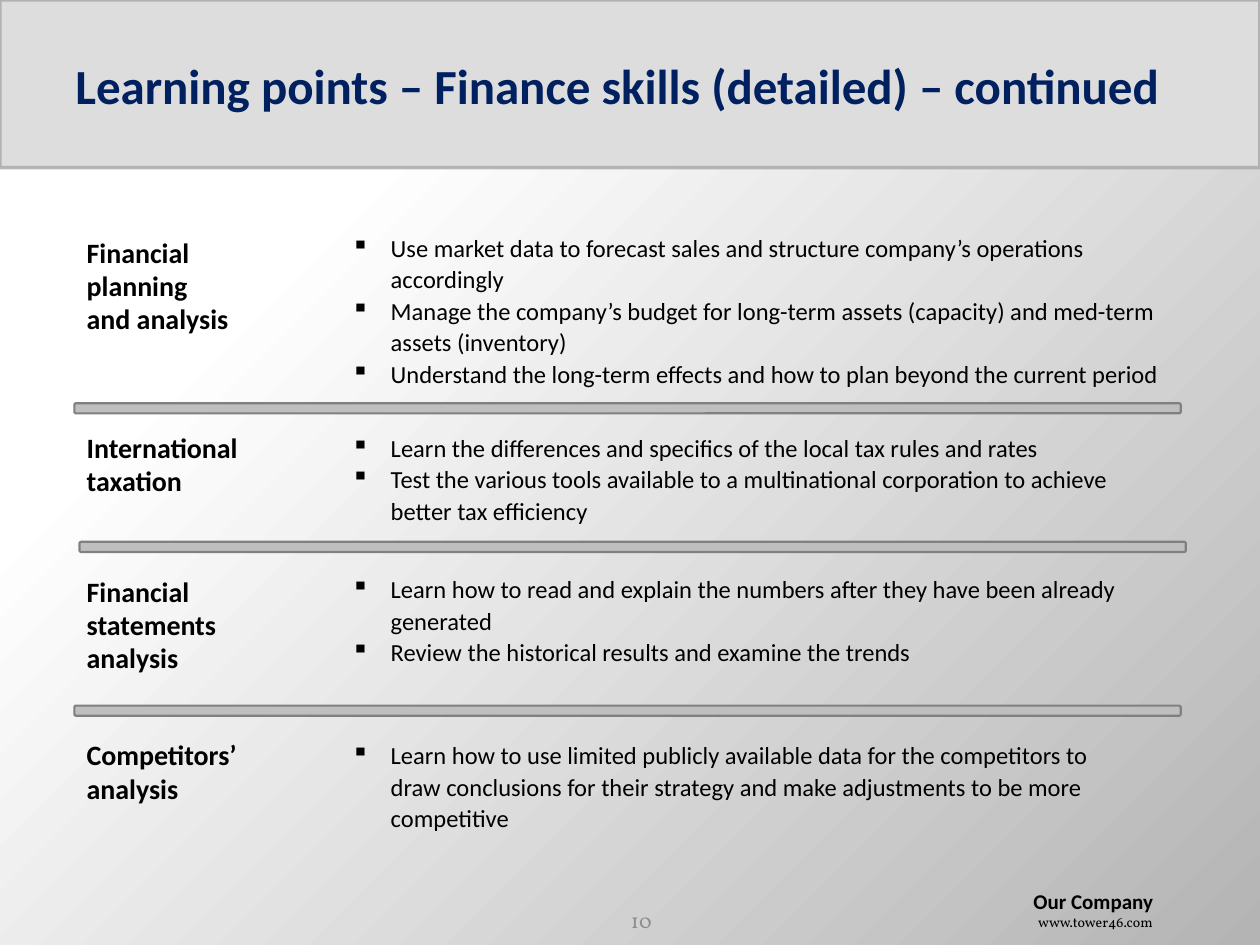
import pptx
import pptx.dml.color
import pptx.enum.shapes
import pptx.enum.text
import pptx.oxml
import pptx.oxml.ns
import pptx.util
from lxml import etree

Pt = pptx.util.Pt
SHAPE = pptx.enum.shapes.MSO_SHAPE
ALIGN = pptx.enum.text.PP_ALIGN
ANCHOR = pptx.enum.text.MSO_ANCHOR
AUTO_SIZE = pptx.enum.text.MSO_AUTO_SIZE
qn = pptx.oxml.ns.qn

LABEL_LEFT, LABEL_WIDTH = 42.5, 187.2
BULLETS_LEFT, BULLET_INDENT = 193.7, 22.5
BAR_WIDTH, BAR_HEIGHT = 632.2, 5.8

LABEL = {"size": Pt(16), "name": "Calibri", "bold": True}
BODY = {"size": Pt(14), "name": "Calibri"}

# Label top, label lines, bullets top, bullets width, bullets height, bullets
ROWS = [
    (131, ["Financial", "planning", "and analysis"], 128.2, 478, 120.2, [
        "Use market data to forecast sales and structure company’s operations accordingly",
        "Manage the company’s budget for long-term assets (capacity) and med-term assets (inventory)",
        "Understand the long-term effects and how to plan beyond the current period"]),
    (242.6, ["International", "taxation"], 242.6, 478, 83.5, [
        "Learn the differences and specifics of the local tax rules and rates",
        "Test the various tools available to a multinational corporation to achieve better tax efficiency"]),
    (324.7, ["Financial", "statements", "analysis"], 323.3, 465.8, 83.5, [
        "Learn how to read and explain the numbers after they have been already generated",
        "Review the historical results and examine the trends"]),
    (418.3, ["Competitors’", "analysis"], 418.3, 465.8, 83.5, [
        "Learn how to use limited publicly available data for the competitors to draw "
        "conclusions for their strategy and make adjustments to be more competitive"]),
]
BARS = [(42.5, 230.4), (45.4, 309.6), (42.5, 403.2)]


def color(value):
    return pptx.dml.color.RGBColor.from_string(value)


def set_background(s):
    """Radial gradient spreading from the top left corner."""
    fill = s.background.fill
    fill.gradient()
    stops = fill.gradient_stops
    for stop, (position, value) in zip(stops, [(0.24, "FFFFFF"), (1, "B4B4B4")]):
        stop.position = position
        stop.color.rgb = color(value)
    grad = s.background._cSld.find(".//" + qn("a:gradFill"))
    linear = grad.find(qn("a:lin"))
    if linear is not None:
        grad.remove(linear)
    radial = etree.SubElement(grad, qn("a:path"), {"path": "circle"})
    etree.SubElement(radial, qn("a:fillToRect"), r="100000", b="100000")


def add_box(s, kind, left, top, width, height, fill, line, line_width):
    sp = s.shapes.add_shape(kind, Pt(left), Pt(top), Pt(width), Pt(height))
    sp.shadow.inherit = False
    sp.fill.solid()
    sp.fill.fore_color.rgb = color(fill)
    sp.line.color.rgb = color(line)
    sp.line.width = Pt(line_width)
    return sp


def add_bullet(p):
    pPr = p._p.get_or_add_pPr()
    pPr.set("marL", str(Pt(BULLET_INDENT)))
    pPr.set("indent", str(-Pt(BULLET_INDENT)))
    etree.SubElement(pPr, qn("a:buChar"), char="▪")


def add_text(s, left, top, width, height, lines, font_color="000000",
             align=ALIGN.LEFT, spacing=None, bullets=False, anchor=None):
    """Each line is a pair of its text and its font values."""
    sp = s.shapes.add_textbox(Pt(left), Pt(top), Pt(width), Pt(height))
    tf = sp.text_frame
    tf.word_wrap = True
    if anchor is None:
        tf.auto_size = AUTO_SIZE.SHAPE_TO_FIT_TEXT
    else:
        tf.vertical_anchor = anchor
    for i, (text, font) in enumerate(lines):
        p = tf.paragraphs[0] if i == 0 else tf.add_paragraph()
        if bullets:
            add_bullet(p)
        p.alignment = align
        if spacing:
            p.line_spacing = Pt(spacing)
        r = p.add_run()
        r.text = text
        r.font.color.rgb = color(font_color)
        for name, value in font.items():
            setattr(r.font, name, value)


def add_row(s, label_top, label, top, width, height, points):
    add_text(s, LABEL_LEFT, label_top, LABEL_WIDTH, 19 * len(label) + 7.2,
             [(line, LABEL) for line in label], spacing=19)
    add_text(s, BULLETS_LEFT, top, width, height,
             [(point, BODY) for point in points], spacing=18, bullets=True)


def main():
    prs = pptx.Presentation()
    prs.slide_width, prs.slide_height = Pt(720), Pt(540)
    s = prs.slides.add_slide(prs.slide_layouts[6])
    set_background(s)

    # Header band with a slightly transparent outline
    band = add_box(s, SHAPE.RECTANGLE, 0, 0, 720, 95.8, "DDDDDD", "A6A6A6", 2)
    line_color = band.line._ln.find(".//" + qn("a:srgbClr"))
    etree.SubElement(line_color, qn("a:alpha"), val="78000")

    # Footer, title and page number
    add_text(s, 576, 504, 90, 31.7, [
        ("Our Company", {"size": Pt(12), "name": "Calibri", "bold": True}),
        ("www.tower46.com", {"size": Pt(8), "name": "Vollkorn"})], align=ALIGN.RIGHT)
    add_text(s, 36, 3.6, 648, 90, [
        ("Learning points – Finance skills (detailed) – continued",
         {"size": Pt(28), "name": "Calibri", "bold": True})],
        font_color="002060", anchor=ANCHOR.MIDDLE)
    add_text(s, 340.6, 511.2, 38.9, 28.8, [("10", {"size": Pt(12), "name": "Vollkorn"})],
             font_color="8C8C8C", align=ALIGN.RIGHT, anchor=ANCHOR.MIDDLE)

    # Skills and the bars between them
    for row in ROWS:
        add_row(s, *row)
    for left, top in BARS:
        add_box(s, SHAPE.ROUNDED_RECTANGLE, left, top, BAR_WIDTH, BAR_HEIGHT,
                "BFBFBF", "808080", 1.25)

    prs.save("out.pptx")


if __name__ == "__main__":
    main()
